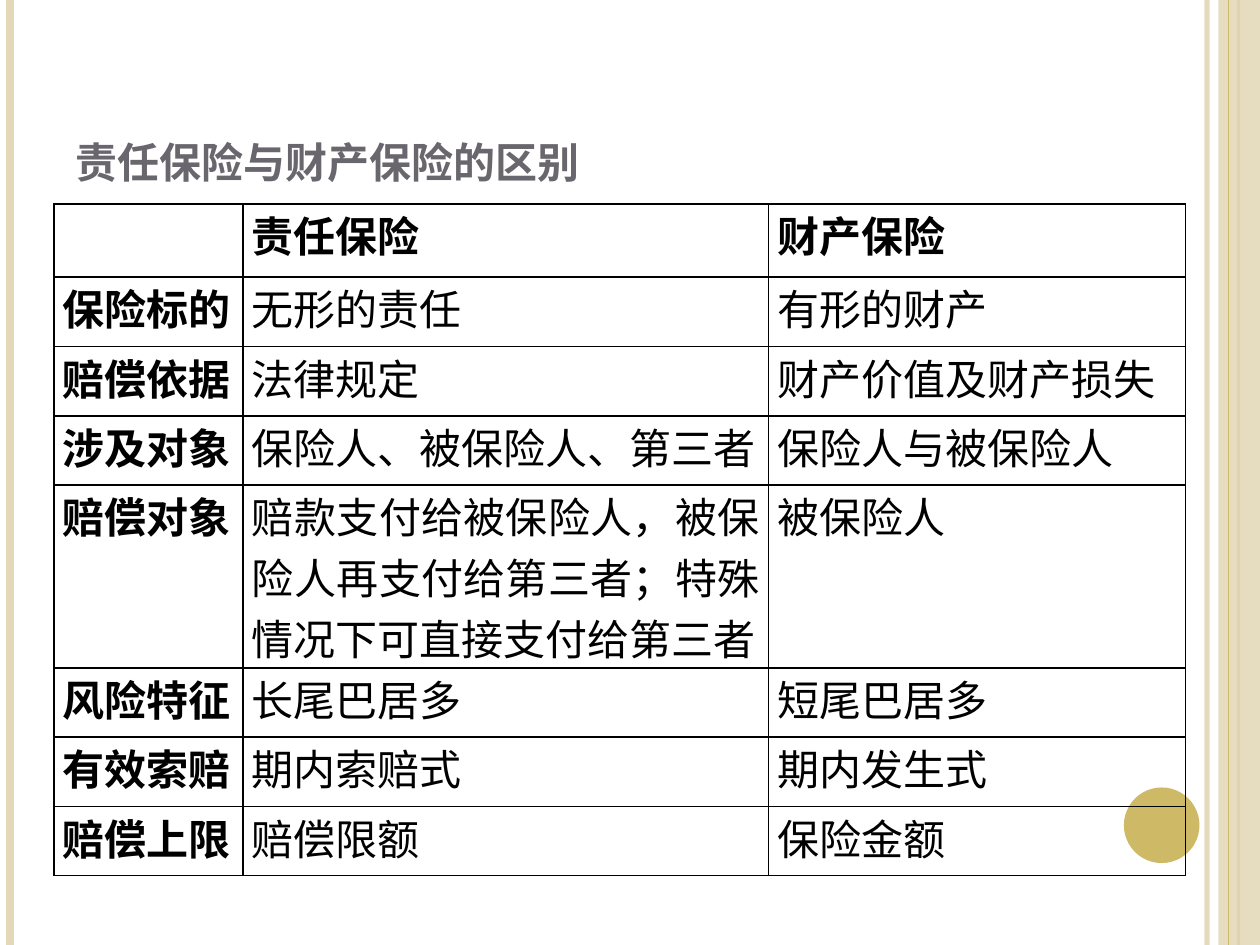
from lxml.etree import SubElement as Sub
from pptx import Presentation
from pptx.dml.color import RGBColor as RGB
from pptx.enum.shapes import MSO_CONNECTOR as Link, MSO_SHAPE as Form
from pptx.enum.text import MSO_ANCHOR as Anchor, PP_ALIGN as Align
from pptx.oxml.ns import qn
from pptx.util import Inches, Pt

SAND = RGB(0xE3, 0xD9, 0xB8)
GOLD = RGB(0xCE, 0xB9, 0x66)
GREY = RGB(0x69, 0x67, 0x6D)
BLACK = RGB(0, 0, 0)

deck = Presentation()
deck.slide_width, deck.slide_height = Inches(10), Inches(7.5)
slide = deck.slides.add_slide(deck.slide_layouts[6])
shapes = slide.shapes


def rule(x, color, width):
    line = shapes.add_connector(Link.STRAIGHT, Inches(x), 0, Inches(x), deck.slide_height)
    line.line.color.rgb = color
    line.line.width = Pt(width)
    Sub(line._element.spPr, qn("a:effectLst"))
    return line


def block(form, x, y, w, h, color):
    shape = shapes.add_shape(form, Inches(x), Inches(y), Inches(w), Inches(h))
    shape.shadow.inherit = False
    shape.fill.solid()
    shape.fill.fore_color.rgb = color
    shape.line.fill.background()
    return shape


edge = rule(9.58, SAND, 3)
rule(0.08, SAND, 4.5)
rule(9.83, GOLD, 1.5)
band = block(Form.RECTANGLE, 9.67, 0, 0.33, 7.5, SAND)
rule(9.75, GOLD, 0.75)
block(Form.OVAL, 8.92, 6.25, 0.6, 0.6, GOLD)
for part, share in ((edge, 93), (band, 87)):
    tint = next(part._element.spPr.iter(qn("a:srgbClr")))
    Sub(tint, qn("a:alpha"), val=str(share * 1000))

title = shapes.add_textbox(Inches(0.5), Inches(0.3), Inches(8.17), Inches(1.25))
frame = title.text_frame
frame.word_wrap = True
frame.vertical_anchor = Anchor.BOTTOM
run = frame.paragraphs[0].add_run()
run.text = "责任保险与财产保险的区别"
run.font.name, run.font.size, run.font.bold = "Cambria", Pt(30), True
run.font.color.rgb = GREY
run._r.get_or_add_rPr().set("cap", "small")

rows = [
    ("", "责任保险", "财产保险"),
    ("保险标的", "无形的责任", "有形的财产"),
    ("赔偿依据", "法律规定", "财产价值及财产损失"),
    ("涉及对象", "保险人、被保险人、第三者", "保险人与被保险人"),
    ("赔偿对象", "赔款支付给被保险人，被保险人再支付给第三者；特殊情况下可直接支付给第三者", "被保险人"),
    ("风险特征", "长尾巴居多", "短尾巴居多"),
    ("有效索赔", "期内索赔式", "期内发生式"),
    ("赔偿上限", "赔偿限额", "保险金额"),
]
widths = [1.5, 4.17, 3.31]
heights = [0.58] + [0.55] * 3 + [1.45] + [0.55] * 3

table = shapes.add_table(len(rows), len(widths), Inches(0.43), Inches(1.62),
                         Inches(sum(widths)), Inches(sum(heights))).table
table.first_row = table.horz_banding = False
for col, width in zip(table.columns, widths):
    col.width = Inches(width)
for row, height in zip(table.rows, heights):
    row.height = Inches(height)

for r, texts in enumerate(rows):
    for c, text in enumerate(texts):
        cell = table.cell(r, c)
        cell.margin_left = cell.margin_right = Inches(0.07)
        cell.margin_top = cell.margin_bottom = 0
        cell.text = text
        para = cell.text_frame.paragraphs[0]
        para.alignment = Align.JUSTIFY
        para.font.name, para.font.size = "Times New Roman", Pt(24)
        para.font.bold = r == 0 or c == 0
        para.font.color.rgb = BLACK
        props = cell._tc.get_or_add_tcPr()
        for side in ("lnL", "lnR", "lnT", "lnB"):
            line = Sub(props, qn(f"a:{side}"), w=str(Pt(1)))
            Sub(Sub(line, qn("a:solidFill")), qn("a:srgbClr"), val=str(BLACK))
        cell.fill.background()

deck.save("out.pptx")
